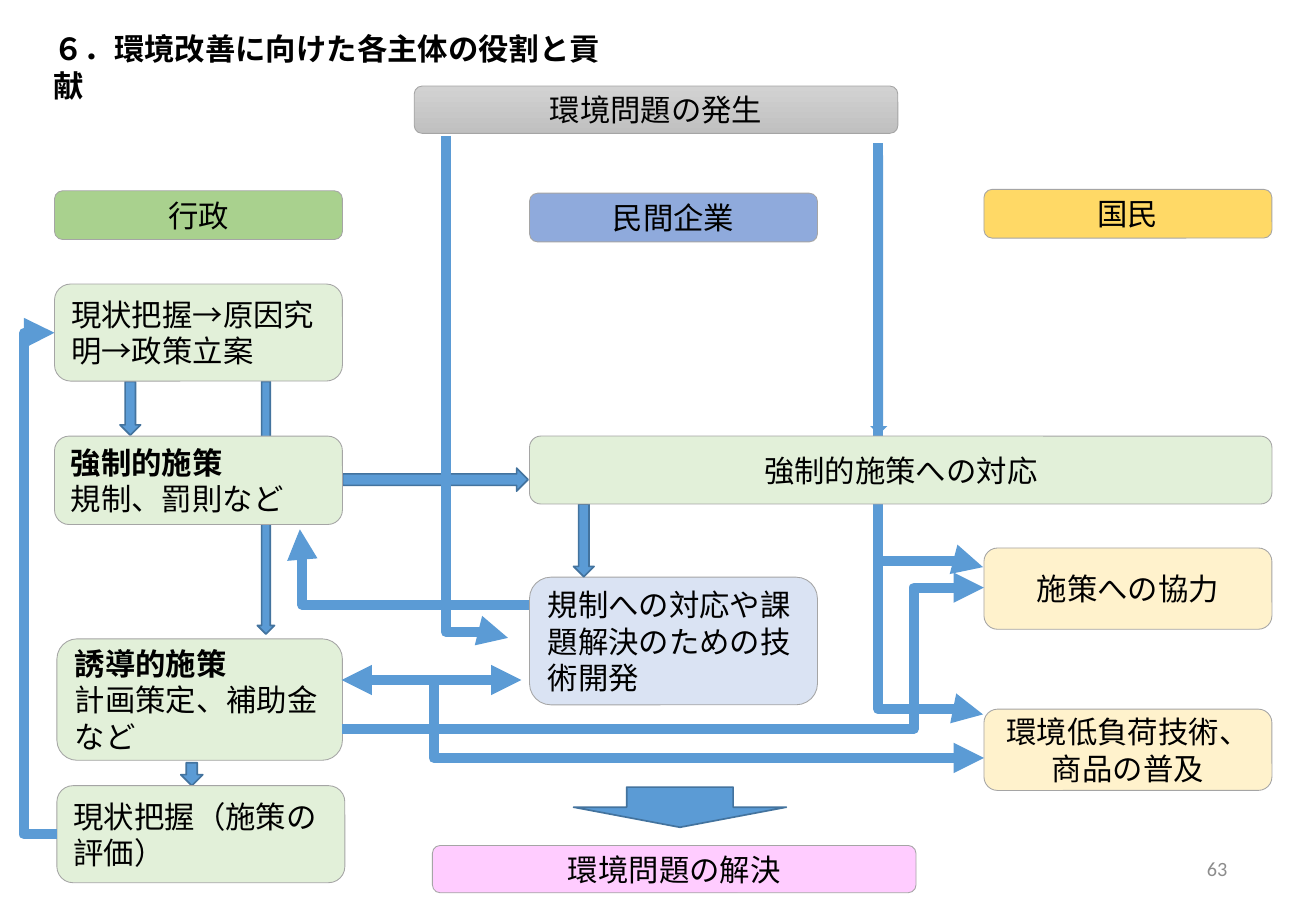
from collections import namedtuple

from lxml.etree import SubElement
from pptx import Presentation
from pptx.dml.color import RGBColor
from pptx.enum.shapes import MSO_CONNECTOR, MSO_SHAPE
from pptx.enum.text import MSO_ANCHOR, MSO_AUTO_SIZE, PP_ALIGN
from pptx.oxml.ns import qn
from pptx.util import Cm, Pt

Box = namedtuple("Box", "left top width height")

COLORS = {
    "black": "000000", "number": "8C8C8C", "border": "A5A5A5",
    "arrow": "5B9BD5", "arrow_edge": "43739E",
    "problem_top": "D2D2D2", "problem_bottom": "C0C0C0", "solution": "FFCCFF",
    "government": "A9D18E", "government_light": "E2F0D9",
    "business": "8FAADC", "business_light": "DAE3F3",
    "citizens": "FFD966", "citizens_light": "FFF2CC",
}
BODY_FONT = {"name": "Calibri", "size": Pt(18), "bold": False}
BOLD_FONT = {**BODY_FONT, "bold": True}
NUMBER_FONT = {**BODY_FONT, "size": Pt(12)}
FRAME = {"word_wrap": True, "auto_size": MSO_AUTO_SIZE.NONE,
         "vertical_anchor": MSO_ANCHOR.MIDDLE}
HEADER_HEIGHT = 1.02


def rgb(name):
    """Return the named colour."""
    return RGBColor.from_string(COLORS[name])


def apply(target, values):
    """Set every attribute listed in values on the target."""
    for name, value in values.items():
        setattr(target, name, value)


def inside(box, left, top, width, height):
    """Return a box placed relative to another box."""
    return Box(box.left + left, box.top + top, width, height)


def lengths(box):
    """Convert the sides of a box from centimetres."""
    return [Cm(side) for side in box]


def write(frame, lines, align, color="black", **frame_values):
    """Fill a text frame with (text, font values) lines."""
    apply(frame, {**FRAME, **frame_values})
    for index, (text, font_values) in enumerate(lines):
        para = frame.paragraphs[0] if index == 0 else frame.add_paragraph()
        para.alignment = align
        span = para.add_run()
        span.text = text
        apply(span.font, font_values)
        span.font.color.rgb = rgb(color)


def add_panel(page, box, fill, text, align=PP_ALIGN.LEFT, heading=None):
    """Draw a rounded panel with an optional bold heading."""
    panel = page.shapes.add_shape(MSO_SHAPE.ROUNDED_RECTANGLE, *lengths(box))
    panel.shadow.inherit = False
    panel.fill.solid()
    panel.fill.fore_color.rgb = rgb(fill)
    panel.line.color.rgb = rgb("border")
    panel.line.width = Pt(0.5)
    lines = [(heading, BOLD_FONT)] if heading else []
    write(panel.text_frame, lines + [(text, BODY_FONT)], align)
    return panel


def add_block_arrow(page, box, kind=MSO_SHAPE.DOWN_ARROW, outlined=True):
    """Draw a solid block arrow."""
    arrow = page.shapes.add_shape(kind, *lengths(box))
    arrow.shadow.inherit = False
    arrow.fill.solid()
    arrow.fill.fore_color.rgb = rgb("arrow")
    if outlined:
        arrow.line.color.rgb = rgb("arrow_edge")
        arrow.line.width = Pt(1)
    else:
        arrow.line.fill.background()


def add_flow(page, kind, start, end, ends=("tailEnd",)):
    """Draw a thick connector with arrowheads."""
    flow = page.shapes.add_connector(kind, *lengths(start + end))
    flow.line.color.rgb = rgb("arrow")
    flow.line.width = Pt(6)
    for name in ends:
        SubElement(flow.line._get_or_add_ln(), qn(f"a:{name}"), type="triangle")
    SubElement(flow._element.spPr, qn("a:effectLst"))
    return flow


def add_elbow(page, start, end, turn, downward=False):
    """Draw an elbow turning at the given x, or y when it runs downward."""
    axis = 1 if downward else 0
    flow = add_flow(page, MSO_CONNECTOR.ELBOW, start, end)
    properties = flow._element.spPr
    if downward:
        center_x, center_y = ((a + b) / 2 for a, b in zip(start, end))
        width, height = end[1] - start[1], end[0] - start[0]
        placed = Box(center_x - width / 2, center_y - height / 2, width, height)
        apply(flow, dict(zip(Box._fields, lengths(placed))))
        flow.rotation = 270
        properties.find(qn("a:xfrm")).set("rot", str(270 * 60000))
        properties.find(qn("a:xfrm")).set("flipH", "1")
    ratio = (turn - start[axis]) / (end[axis] - start[axis])
    guides = properties.find(qn("a:prstGeom")).find(qn("a:avLst"))
    SubElement(guides, qn("a:gd"), name="adj1", fmla=f"val {round(ratio * 100000)}")


def draw_heading(page, box):
    """Place the slide title."""
    title = page.shapes.title
    apply(title, dict(zip(Box._fields, lengths(box))))
    write(title.text_frame, [("６．環境改善に向けた各主体の役割と貢献", BOLD_FONT)],
          PP_ALIGN.LEFT, vertical_anchor=MSO_ANCHOR.TOP)


def draw_page_number(page, box):
    """Place the page number."""
    number = page.shapes.add_textbox(*lengths(box))
    write(number.text_frame, [("63", NUMBER_FONT)], PP_ALIGN.RIGHT, "number")


def draw_problem(page, box):
    """Draw the starting problem with its shaded fill."""
    panel = add_panel(page, box, "problem_top", "環境問題の発生", PP_ALIGN.CENTER)
    panel.fill.gradient()
    panel.fill.gradient_angle = 270
    for stop, name in zip(panel.fill.gradient_stops, ("problem_top", "problem_bottom")):
        stop.color.rgb = rgb(name)


def draw_solution(page, box):
    """Draw the wide arrow and the solved problem below it."""
    add_block_arrow(page, inside(box, 2.95, 0, 4.45, 0.84))
    add_panel(page, inside(box, 0, 1.22, box.width, 0.99), "solution",
              "環境問題の解決", PP_ALIGN.CENTER)


def draw_government(page, box):
    """Draw the government column and its block arrows."""
    add_panel(page, inside(box, 0, 0, box.width, HEADER_HEIGHT), "government",
              "行政", PP_ALIGN.CENTER)
    for arrow in ((1.37, 3.99, 0.43, 1.12), (4.24, 3.99, 0.36, 5.28),
                  (2.64, 11.96, 0.46, 0.48)):
        add_block_arrow(page, inside(box, *arrow))
    add_block_arrow(page, inside(box, box.width, 5.8, 3.88, 0.48), MSO_SHAPE.RIGHT_ARROW)
    for left, top, width, height, heading, text in (
        (0, 1.95, box.width, 2.03, None, "現状把握→原因究明→政策立案"),
        (0, 5.13, box.width, 1.85, "強制的施策", "規制、罰則など"),
        (0.05, 9.37, box.width - 0.05, 2.54, "誘導的施策", "計画策定、補助金など"),
        (0.05, 12.44, box.width, 2.03, None, "現状把握（施策の評価）"),
    ):
        add_panel(page, inside(box, left, top, width, height), "government_light",
                  text, heading=heading)


def draw_business(page, box):
    """Draw the private company column."""
    add_panel(page, inside(box, 0, 0, box.width, HEADER_HEIGHT), "business",
              "民間企業", PP_ALIGN.CENTER)
    add_panel(page, inside(box, 0, 8.03, box.width, 2.67), "business_light",
              "規制への対応や課題解決のための技術開発")
    add_block_arrow(page, inside(box, 0.92, 6.5, 0.43, 1.52))


def draw_citizens(page, box):
    """Draw the citizen column."""
    for top, height, fill, text in (
        (0, HEADER_HEIGHT, "citizens", "国民"),
        (7.5, 1.7, "citizens_light", "施策への協力"),
        (10.87, 1.7, "citizens_light", "環境低負荷技術、商品の普及"),
    ):
        add_panel(page, inside(box, 0, top, box.width, height), fill, text, PP_ALIGN.CENTER)


def draw_flows(page, box):
    """Draw the connectors that link the columns."""
    def point(x, y):
        return box.left + x, box.top + y

    for start, end, turn in (
        ((11.05, 12.65), (6.27, 11.07), 6.32),
        ((7.14, 15.24), (20.57, 12.29), 19.1),
        ((9.02, 14.33), (20.57, 15.85), 9.07),
        ((1.19, 17.45), (1.14, 6.96), 0.51),
    ):
        add_elbow(page, point(*start), point(*end), box.left + turn)
    for start, end, turn in (
        ((9.32, 2.84), (10.62, 13.34), 13.21),
        ((18.36, 3), (20.55, 11.86), 11.73),
        ((18.36, 6.1), (20.55, 14.94), 14.83),
    ):
        add_elbow(page, point(*start), point(*end), box.top + turn, downward=True)
    add_flow(page, MSO_CONNECTOR.STRAIGHT, point(7.14, 14.22), point(10.9, 14.22),
             ("headEnd", "tailEnd"))
    add_block_arrow(page, inside(box, 18.19, 3.25, 0.36, 5.84), outlined=False)


def main():
    """Build and save the deck."""
    deck = Presentation()
    deck.slide_width, deck.slide_height = Cm(27.51), Cm(19.05)
    page = deck.slides.add_slide(deck.slide_layouts.get_by_name("Title Only"))
    draw_heading(page, Box(0.86, 0.51, 12.07, 1.02))
    draw_page_number(page, Box(19.71, 17.65, 6.2, 1.02))
    draw_problem(page, Box(8.66, 1.8, 10.11, 0.99))
    draw_government(page, Box(1.14, 3.99, 6.02, 14.47))
    draw_business(page, Box(11.07, 4.04, 6.02, 10.7))
    draw_citizens(page, Box(20.57, 3.96, 6.02, 12.57))
    draw_solution(page, Box(9.04, 16.46, 10.11, 2.21))
    draw_flows(page, Box(0, 0, 27.51, 19.05))
    add_panel(page, Box(11.07, 9.12, 15.52, 1.42), "government_light",
              "強制的施策への対応", PP_ALIGN.CENTER)
    deck.save("out.pptx")


if __name__ == "__main__":
    main()
